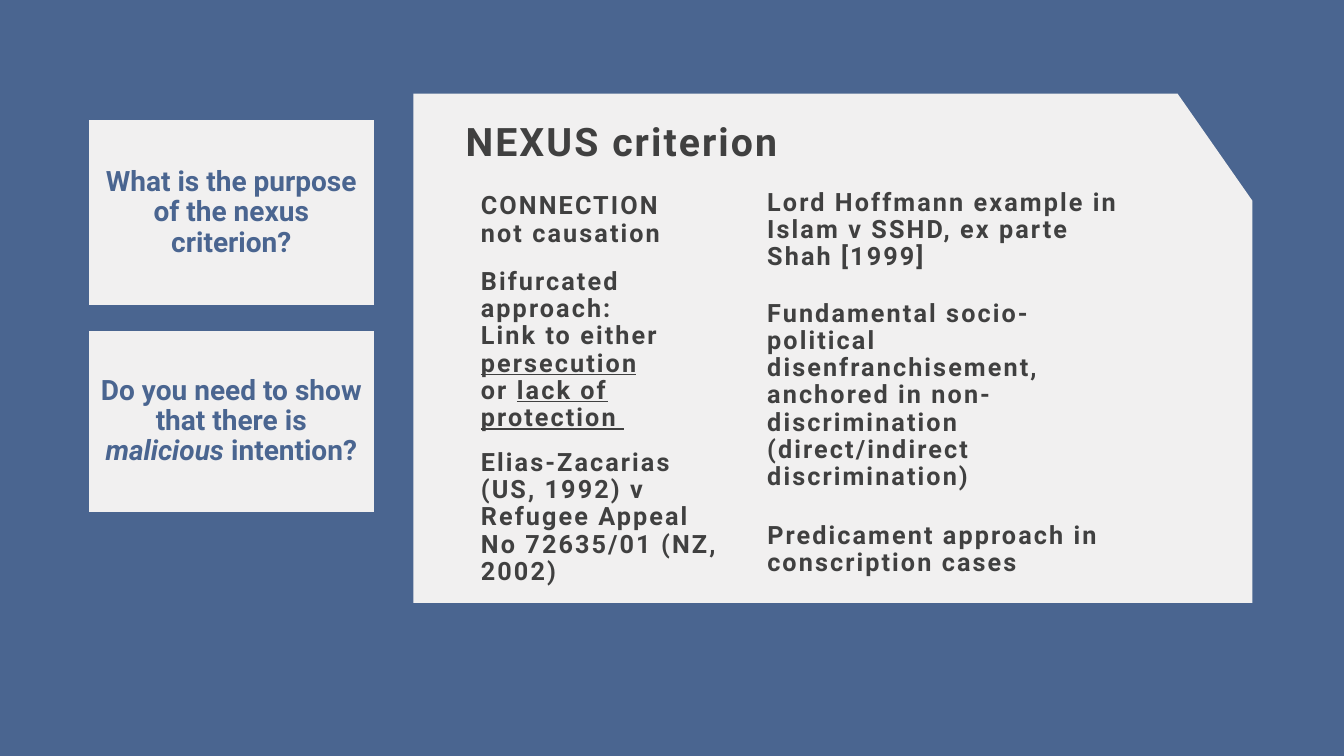
from dataclasses import dataclass

from pptx import Presentation
from pptx.dml.color import RGBColor
from pptx.enum.shapes import MSO_SHAPE
from pptx.enum.text import MSO_ANCHOR, PP_ALIGN
from pptx.util import Inches, Pt


@dataclass(frozen=True)
class Theme:
    """Colours, font and type sizes of the slide."""
    blue: RGBColor = RGBColor(0x4A, 0x65, 0x90)
    paper: RGBColor = RGBColor(0xF1, 0xF0, 0xF0)
    ink: RGBColor = RGBColor(0x40, 0x40, 0x40)
    font: str = "Roboto"
    title: int = 28
    question: int = 20
    body: int = 18
    tracking: int = 150


THEME = Theme()
LINE_SPACING = 0.9
NOTE_HEIGHT = 0.35
LEFT_COLUMN, RIGHT_COLUMN = 0.67, 3.51
NOTES = [
    (LEFT_COLUMN, 1.08, 1.9, [("CONNECTION not causation", "")]),
    (LEFT_COLUMN, 2.37, 1.9, [("Bifurcated approach:\vLink to either ", ""),
                              ("persecution", "u"), ("\vor ", ""),
                              ("lack of protection ", "u")]),
    (LEFT_COLUMN, 4.03, 2.46, [("Elias-Zacarias (US, 1992) v Refugee Appeal "
                                "No 72635/01 (NZ, 2002)", "")]),
    (RIGHT_COLUMN, 1.18, 3.63, [("Lord Hoffmann example in Islam v SSHD, "
                                 "ex parte Shah [1999]", "")]),
    (RIGHT_COLUMN, 2.82, 3.46, [("Fundamental socio-political disenfranchisement, "
                                 "anchored in non-discrimination "
                                 "(direct/indirect discrimination)", "")]),
    (RIGHT_COLUMN, 4.35, 4.45, [("Predicament approach in conscription cases", "")]),
]
QUESTIONS = [
    (0, 1.88, [("What is the purpose of the nexus criterion?", "")]),
    (2.09, 1.84, [("Do you need to show that there is ", ""),
                  ("malicious", "i"), (" intention?", "")]),
]


def write_text(frame, pieces, size, color, tracking=0):
    """Write one bold paragraph of (text, style) pieces into a frame."""
    frame.word_wrap = True
    para = frame.paragraphs[0]
    para.line_spacing = LINE_SPACING
    for text, style in pieces:
        start = len(para.runs)
        lines = text.split("\v")
        for number, line in enumerate(lines):
            if number:
                para.add_line_break()
            if line:
                para.add_run().text = line
        for span in para.runs[start:]:
            font = span.font
            font.name, font.size, font.bold = THEME.font, Pt(size), True
            font.color.rgb = color
            if style == "u":
                font.underline = True
            if style == "i":
                font.italic = True
            if tracking:
                font._element.set("spc", str(tracking))
    return para


def add_text(page, left, top, width, height, pieces, size):
    """Add a text box with letter-spaced dark text."""
    box = page.shapes.add_textbox(Inches(left), Inches(top), Inches(width), Inches(height))
    write_text(box.text_frame, pieces, size, THEME.ink, THEME.tracking)
    return box


def add_card(page, left, top, width, height):
    """Draw the card with its cut corner, title and two columns of notes."""
    cut_width, cut_height = 0.74, 1.06
    corners = [(width - cut_width, 0), (width, cut_height), (width, height), (0, height)]
    builder = page.shapes.build_freeform(Inches(left), Inches(top))
    builder.add_line_segments([(Inches(left + x), Inches(top + y)) for x, y in corners])
    card = builder.convert_to_shape()
    card.shadow.inherit = False
    card.fill.solid()
    card.fill.fore_color.rgb = THEME.paper
    card.line.fill.background()

    add_text(page, left + 0.42, top + 0.24, 6.88, 1.04,
             [("NEXUS criterion", "")], THEME.title)
    for x, y, note_width, pieces in NOTES:
        box = add_text(page, left + x, top + y, note_width, NOTE_HEIGHT, pieces, THEME.body)
        frame = box.text_frame
        frame.vertical_anchor = MSO_ANCHOR.MIDDLE
        frame.margin_left = frame.margin_right = 0


def add_questions(page, left, top, width):
    """Stack the question panels below each other."""
    for offset, height, pieces in QUESTIONS:
        panel = page.shapes.add_shape(MSO_SHAPE.RECTANGLE, Inches(left), Inches(top + offset),
                                      Inches(width), Inches(height))
        panel.shadow.inherit = False
        panel.fill.solid()
        panel.fill.fore_color.rgb = THEME.paper
        panel.line.color.rgb = THEME.blue
        panel.line.width = Pt(3)
        panel.text_frame.vertical_anchor = MSO_ANCHOR.MIDDLE
        para = write_text(panel.text_frame, pieces, THEME.question, THEME.blue)
        para.alignment = PP_ALIGN.CENTER


def main():
    """Build and save the deck."""
    deck = Presentation()
    deck.slide_width, deck.slide_height = Inches(13.33), Inches(7.5)
    page = deck.slides.add_slide(deck.slide_layouts[6])
    page.background.fill.solid()
    page.background.fill.fore_color.rgb = THEME.blue
    add_card(page, 4.1, 0.93, 8.32, 5.05)
    add_questions(page, 0.86, 1.17, 2.87)
    deck.save("out.pptx")


if __name__ == "__main__":
    main()
